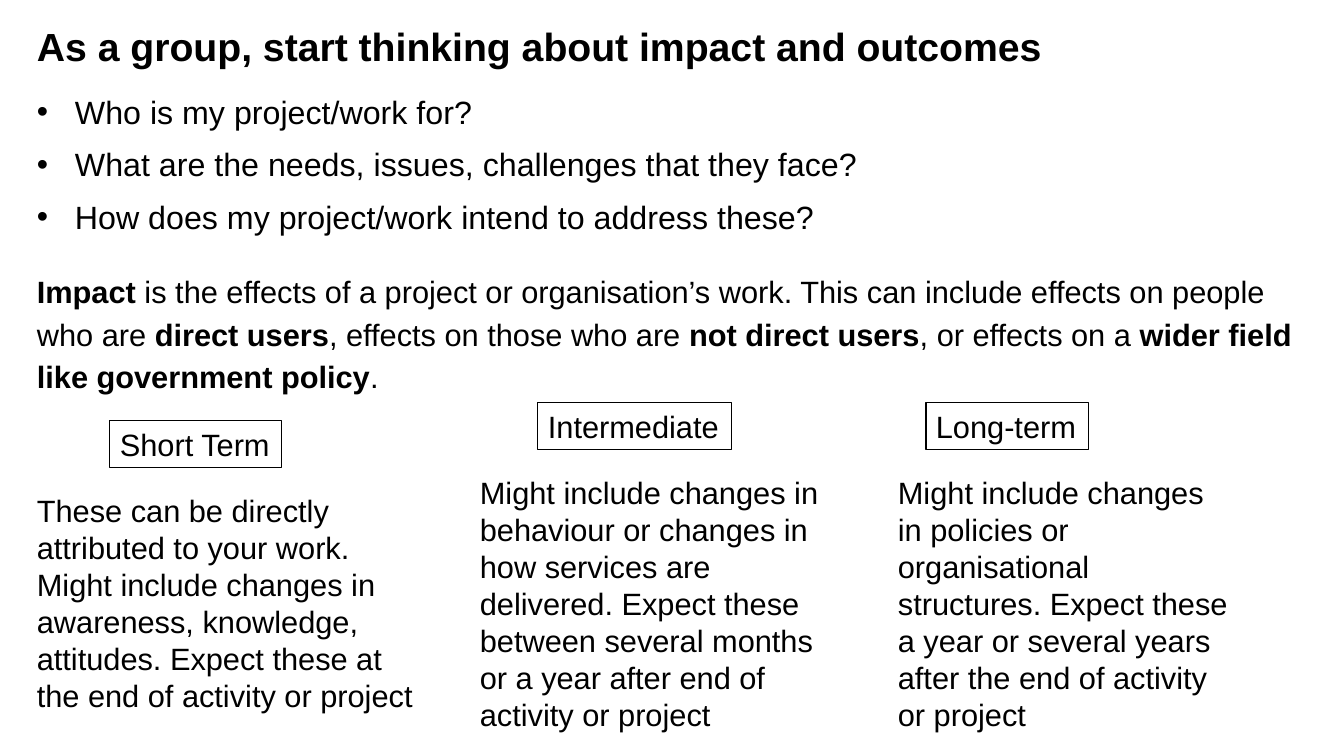
from pptx import Presentation
from pptx.dml.color import RGBColor as Rgb
from pptx.enum.shapes import MSO_SHAPE as Shape
from pptx.enum.text import MSO_ANCHOR as Anchor, MSO_AUTO_SIZE as Fit, PP_ALIGN as Align
from pptx.util import Pt
from lxml.etree import SubElement

PX = 914400 / 100.8
FONT = "Arial"
COLORS = {"ink": "000000", "page": "FFFFFF"}
LEFT, GAP, LINE, LABEL = 27, 66, 37, 47

TITLE = "As a group, start thinking about impact and outcomes"
ASKS = [
    "Who is my project/work for?",
    "What are the needs, issues, challenges that they face?",
    "How does my project/work intend to address these?",
]
IMPACT = [
    ("Impact ", True),
    ("is the effects of a project or organisation’s work. "
     "This can include effects on people who are ", False),
    ("direct users", True),
    (", effects on those who are ", False),
    ("not direct users", True),
    (", or effects on a ", False),
    ("wider field like government policy", True),
    (".", False),
]
TERMS = [
    {"name": "Short Term", "tag": (110, 421, 172), "left": LEFT, "width": 402, "lines": 6,
     "text": "These can be directly attributed to your work. Might include changes in "
             "awareness, knowledge, attitudes. Expect these at the end of activity or project"},
    {"name": "Intermediate", "tag": (538, 403, 194), "left": 470, "width": 364, "lines": 7,
     "text": "Might include changes in behaviour or changes in how services are delivered. "
             "Expect these between several months or a year after end of activity or project"},
    {"name": "Long-term", "tag": (926, 403, 163), "left": 888, "width": 356, "lines": 7,
     "text": "Might include changes in policies or organisational structures. "
             "Expect these a year or several years after the end of activity or project"},
]


def px(n):
    return round(n * PX)


def color(name):
    return Rgb.from_string(COLORS[name])


def write(text, box, size=22, bold=False, space=None, after=0, bullet=None, frame=False):
    area = [px(n) for n in box]
    if frame:
        shape = slide.shapes.add_shape(Shape.RECTANGLE, *area)
        shape.shadow.inherit = False
        shape.fill.background()
        shape.line.color.rgb = color("ink")
        shape.line.width = Pt(0.75)
    else:
        shape = slide.shapes.add_textbox(*area)
    body = shape.text_frame
    body.word_wrap = not frame
    body.auto_size = Fit.SHAPE_TO_FIT_TEXT
    body.vertical_anchor = Anchor.TOP
    paras = text if isinstance(text, list) else [[(text, bold)]]
    for i, runs in enumerate(paras):
        para = body.add_paragraph() if i else body.paragraphs[0]
        para.alignment = Align.LEFT
        para.line_spacing = space
        para.space_after = Pt(after)
        if bullet:
            props = para._p.get_or_add_pPr()
            props.set("marL", str(px(38)))
            props.set("indent", str(-px(38)))
            space_name = props.tag.split("}")[0] + "}"
            SubElement(props, space_name + "buFont", typeface=FONT)
            SubElement(props, space_name + "buChar", char=bullet)
        for words, heavy in runs:
            run = para.add_run()
            run.text = words
            run.font.name = FONT
            run.font.size = Pt(size)
            run.font.bold = heavy
            run.font.color.rgb = color("ink")


deck = Presentation()
deck.slide_width, deck.slide_height = px(1344), px(756)
slide = deck.slides.add_slide(deck.slide_layouts[6])
slide.background.fill.solid()
slide.background.fill.fore_color.rgb = color("page")

write(TITLE, (LEFT, 17, 1258, 57), size=28, bold=True)
write([[(ask, False)] for ask in ASKS], (LEFT, 82, 1217, 160),
      size=23, space=1.14, after=6, bullet="•")
write([IMPACT], (LEFT, 263, 1293, 138), space=1.14, after=6)
for term in TERMS:
    left, top, width = term["tag"]
    write(term["name"], (left, top, width, LABEL), frame=True)
    high = term["lines"] * LINE + 12
    write(term["text"], (term["left"], top + GAP, term["width"], high))

deck.save("out.pptx")
